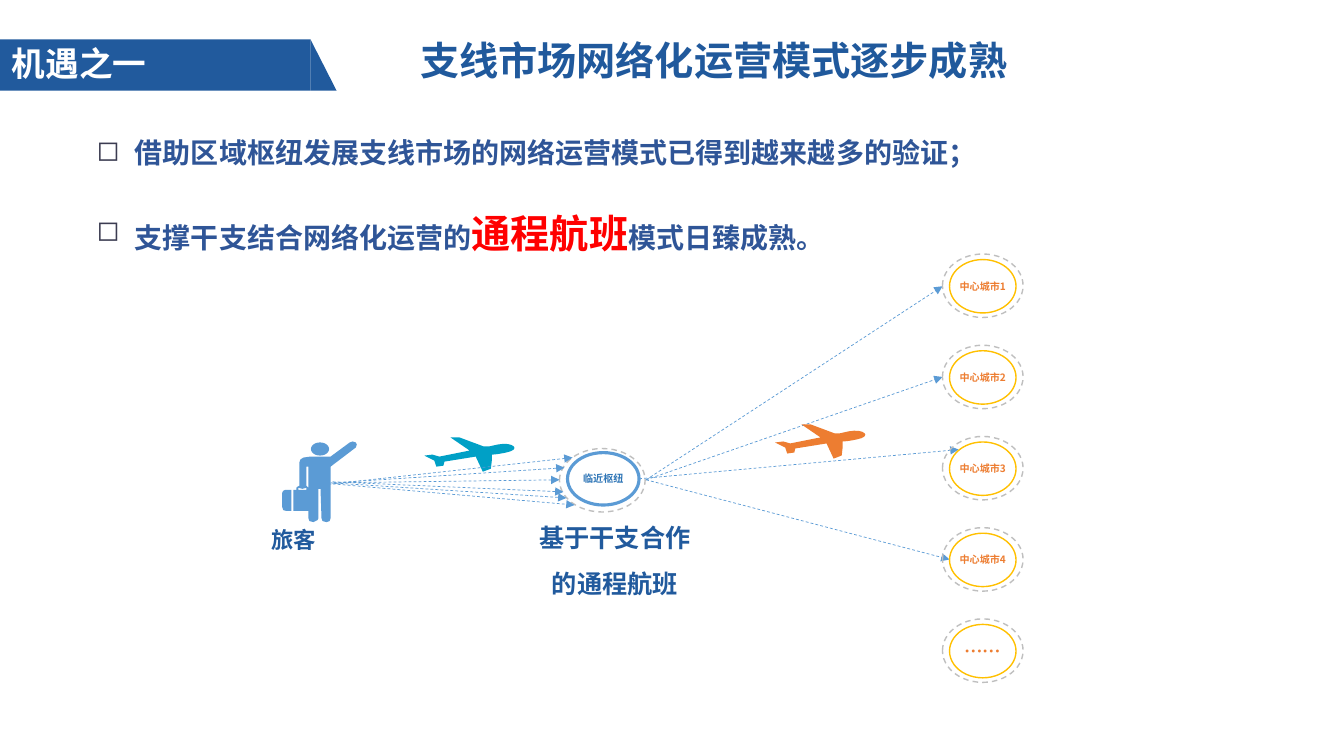
import dataclasses
import math

import pptx
import pptx.dml.color
import pptx.enum.dml
import pptx.enum.shapes
import pptx.enum.text
import pptx.oxml.ns
import pptx.util
from lxml import etree

CELL = 0.1
FONT = "Noto Sans CJK SC"
COLORS = {
    "band": "215A9D", "title": "20599C", "body": "2F5597", "bullet": "3B3C51",
    "accent": "FF0000", "white": "FFFFFF", "sky": "5B9BD5", "hub": "2E75B6",
    "feeder": "00A0C6", "trunk": "ED7D31", "city": "FFC000", "ring": "BFBFBF",
}
SHAPES = pptx.enum.shapes.MSO_SHAPE
ALIGN = pptx.enum.text.PP_ALIGN
MIDDLE = pptx.enum.text.MSO_ANCHOR.MIDDLE
qn = pptx.oxml.ns.qn

PLANE_NOSE = [((7.3, 0.7), (8.8, 0.4), (9.7, 1.2), (8.1, 1.5)),
              ((8.1, 1.5), (7.2, 1.7), (6.7, 1.7), (6.7, 1.7))]
PLANE_BODY = [(6.7, 2.3), (6.6, 3.1), (5.8, 3.4), (5.1, 1.9), (2, 2.4), (1.9, 2.8),
              (1.2, 2.9), (1, 2.3), (0, 1.8), (0.8, 1.7), (1.5, 1.9), (4.5, 1.3),
              (2.6, 0), (3.5, 0), (5.9, 0.9), (6.4, 0.9)]
TORSO = [(7, 0), (6.7, 0.1), (4.8, 1.5), (2.8, 1.5), (2.1, 1.6), (1.8, 1.8), (1.7, 2.1),
         (1.7, 4.4), (1.5, 4.5), (1.4, 4.6), (1.4, 4.8), (1.1, 4.8), (1.1, 6.9),
         (2.6, 6.9), (2.6, 7.6), (2.7, 7.9), (3.1, 8), (3.5, 7.8), (3.6, 7.6),
         (3.6, 4.7), (3.8, 4.7), (3.9, 7.6), (4, 7.9), (4.4, 8), (4.7, 7.9),
         (4.8, 7.6), (4.8, 2.5), (7.3, 0.6), (7.4, 0.3), (7.3, 0.1)]
CASE = [(0.9, 4.8), (0.3, 4.8), (0.1, 4.9), (0, 5.1), (0, 6.5), (0.1, 6.8),
        (0.4, 6.9), (0.9, 6.9)]
HANDLE = [(2.4, 4.6), (2.4, 4.8), (1.6, 4.8), (1.6, 4.6), (2, 4.7)]
SLEEVE = [(2.6, 2.5), (2.6, 4.8), (2.6, 4.6), (2.4, 4.4), (2.4, 2.5)]


@dataclasses.dataclass
class Box:
    """A region of the slide, measured in grid cells."""
    left: float
    top: float
    width: float
    height: float

    def point(self, x, y):
        """Return a slide position for a point inside the region."""
        return cells(self.left + x), cells(self.top + y)

    def inset(self, left, top, width, height):
        """Return a smaller box inside the region."""
        return Box(self.left + left, self.top + top, width, height)

    def frame(self):
        """Return left, top, width and height as slide lengths."""
        return [cells(n) for n in (self.left, self.top, self.width, self.height)]


def cells(count):
    """Convert grid cells to a slide length."""
    return pptx.util.Inches(count * CELL)


def rgb(name):
    """Look up a named colour."""
    return pptx.dml.color.RGBColor.from_string(COLORS[name])


def write(para, *spans):
    """Fill a paragraph with (text, size, colour) runs."""
    for text, size, color in spans:
        span = para.add_run()
        span.text = text
        span.font.size = pptx.util.Pt(size)
        span.font.bold = True
        span.font.color.rgb = rgb(color)
        span.font.name = FONT
        etree.SubElement(span._r.get_or_add_rPr(), qn("a:ea"), typeface=FONT)


def add_text(page, box):
    """Add a wrapping text box that grows with its text."""
    frame = page.shapes.add_textbox(*box.frame()).text_frame
    frame.word_wrap = True
    frame.auto_size = pptx.enum.text.MSO_AUTO_SIZE.SHAPE_TO_FIT_TEXT
    return frame


def paint(shape, fill=None, line=None, width=1):
    """Set the fill and outline of a shape and drop its shadow."""
    shape.shadow.inherit = False
    if fill:
        shape.fill.solid()
        shape.fill.fore_color.rgb = rgb(fill)
    else:
        shape.fill.background()
    if line:
        shape.line.color.rgb = rgb(line)
        shape.line.width = pptx.util.Pt(width)
    else:
        shape.line.fill.background()
    return shape


def add_shape(page, kind, box, **look):
    """Add a painted preset shape."""
    return paint(page.shapes.add_shape(kind, *box.frame()), **look)


def add_outline(page, box, contours, color):
    """Draw one filled freeform made of closed contours."""
    first, *others = [[box.point(*p) for p in contour] for contour in contours]
    builder = page.shapes.build_freeform(*first[0])
    builder.add_line_segments(first[1:])
    for contour in others:
        builder.move_to(*contour[0])
        builder.add_line_segments(contour[1:])
    paint(builder.convert_to_shape(), fill=color)


def add_arrow(page, box, start, end):
    """Add a dashed arrow between two points of the region."""
    arrow = page.shapes.add_connector(
        pptx.enum.shapes.MSO_CONNECTOR.STRAIGHT, *box.point(*start), *box.point(*end))
    arrow.line.color.rgb = rgb("sky")
    arrow.line.width = pptx.util.Pt(0.5)
    arrow.line.dash_style = pptx.enum.dml.MSO_LINE.DASH
    properties = arrow.element.spPr
    etree.SubElement(properties.find(qn("a:ln")), qn("a:tailEnd"), type="triangle")
    etree.SubElement(properties, qn("a:effectLst"))


def add_plane(page, box, color):
    """Draw an aircraft with a rounded nose."""
    nose = []
    for curve in PLANE_NOSE:
        for step in range(9):
            t = step / 8
            weights = [math.comb(3, k) * t ** k * (1 - t) ** (3 - k) for k in range(4)]
            nose.append([sum(w * p[axis] for w, p in zip(weights, curve)) for axis in (0, 1)])
    add_outline(page, box, [nose + PLANE_BODY], color)


def add_passenger(page, box):
    """Draw a waving traveller with a suitcase."""
    turns = [math.tau * step / 32 for step in range(32)]
    head = [(3.75 + 0.9 * math.cos(a), 0.75 + 0.65 * math.sin(a)) for a in turns]
    add_outline(page, box, [CASE, HANDLE, SLEEVE, head, TORSO], "sky")


def add_node(page, box, inner, label, size, color, line, width):
    """Add a labelled ellipse inside a dashed ring."""
    node = add_shape(page, SHAPES.OVAL, inner, line=line, width=width)
    frame = node.text_frame
    frame.word_wrap = True
    frame.margin_left = frame.margin_right = 0
    frame.vertical_anchor = MIDDLE
    frame.paragraphs[0].alignment = ALIGN.CENTER
    write(frame.paragraphs[0], (label, size, color))
    ring = add_shape(page, SHAPES.OVAL, box, line="ring")
    ring.line.dash_style = pptx.enum.dml.MSO_LINE.DASH


def add_header(page, box):
    """Place the section band and the slide title."""
    add_shape(page, SHAPES.RECTANGLE, box.inset(0, 1.7, 30.8, 5.1), fill="band")
    add_shape(page, SHAPES.RIGHT_TRIANGLE, box.inset(30.8, 1.7, 2.6, 5.1), fill="band")
    section = add_text(page, box.inset(0.2, 1.6, 23.8, 5))
    write(section.paragraphs[0], ("机遇之一", 24, "white"))
    title = add_text(page, box.inset(30.2, 0, 81.2, 6.6))
    title.vertical_anchor = MIDDLE
    para = title.paragraphs[0]
    para.alignment = ALIGN.CENTER
    para.line_spacing = 1.2
    write(para, ("支线市场网络化运营模式逐步成熟", 28, "title"))


def add_points(page, box):
    """Place the two bulleted statements."""
    frame = add_text(page, box)
    points = [
        [("借助区域枢纽发展支线市场的网络运营模式已得到越来越多的验证；", 20, "body")],
        [("支撑干支结合网络化运营的", 20, "body"), ("通程航班", 28, "accent"),
         ("模式日臻成熟。", 20, "body")],
    ]
    for index, spans in enumerate(points):
        para = frame.add_paragraph() if index else frame.paragraphs[0]
        para.alignment = ALIGN.JUSTIFY
        para.line_spacing = 1.5
        para.space_before = pptx.util.Pt(6 if index else 0)
        para.space_after = pptx.util.Pt(6)
        layout = para._p.get_or_add_pPr()
        layout.set("marL", str(cells(3.8)))
        layout.set("indent", str(-cells(3.8)))
        tint = etree.SubElement(layout, qn("a:buClr"))
        etree.SubElement(tint, qn("a:srgbClr"), val=COLORS["bullet"])
        etree.SubElement(layout, qn("a:buChar"), char="◻")
        write(para, *spans)


def add_feeder_leg(page, box):
    """Place the passenger, the feeder flights and the nearby hub."""
    add_passenger(page, box.inset(2.1, 0.4, 7.4, 8))
    add_plane(page, box.inset(16.2, 0, 9.6, 3.4), "feeder")
    add_node(page, box.inset(29.6, 1.1, 8.5, 6.3), box.inset(30.4, 1.5, 7.1, 5.2),
             "临近枢纽", 7.2, "hub", "sky", 2.25)
    for start, end in [((7.2, 4.5), (29.6, 4.2)), ((6.9, 4.5), (30.3, 6)),
                       ((6.2, 4.7), (30.9, 2)), ((7.1, 4.4), (30, 5.4)),
                       ((7.2, 4.5), (30.1, 3)), ((7.1, 4.6), (31.1, 6.7))]:
        add_arrow(page, box, start, end)
    passenger = add_text(page, box.inset(0, 8.3, 14.2, 3.7))
    write(passenger.paragraphs[0], ("旅客", 16, "band"))
    caption = add_shape(page, SHAPES.ROUNDED_RECTANGLE, box.inset(17.3, 7.9, 35.6, 7.1)).text_frame
    caption.word_wrap = True
    caption.vertical_anchor = MIDDLE
    for para, line in zip((caption.paragraphs[0], caption.add_paragraph()),
                          ("基于干支合作", "的通程航班")):
        para.alignment = ALIGN.CENTER
        para.line_spacing = 1.5
        write(para, (line, 18, "band"))


def add_trunk_leg(page, box):
    """Place the trunk flights from the hub to the central cities."""
    for start, end in [((0.7, 22.4), (30.1, 3.2)), ((0.7, 22.4), (30.1, 12.2)),
                       ((0, 22.3), (31.7, 19.4)), ((0.7, 22.4), (30.8, 30.3))]:
        add_arrow(page, box, start, end)
    cities = [(f"中心城市{number}", 7.2) for number in range(1, 5)] + [("……", 13.2)]
    for row, (label, size) in enumerate(cities):
        ring = box.inset(30.1, 9.05 * row, 8, 6.3)
        add_node(page, ring, ring.inset(0.7, 0.55, 6.6, 5.3), label, size, "trunk", "city", 1)
    add_plane(page, box.inset(13.5, 16.9, 9.6, 3.4), "trunk")


def main():
    """Build the slide and save the deck."""
    deck = pptx.Presentation()
    deck.slide_width, deck.slide_height = cells(133.33), cells(75)
    page = deck.slides.add_slide(deck.slide_layouts[6])
    add_header(page, Box(0, 2.2, 133.33, 6.8))
    add_points(page, Box(8.6, 11.3, 116.2, 14.8))
    add_feeder_leg(page, Box(25.9, 43.4, 52.9, 15))
    add_trunk_leg(page, Box(63.4, 25.2, 38.1, 42.5))
    deck.save("out.pptx")


if __name__ == "__main__":
    main()
